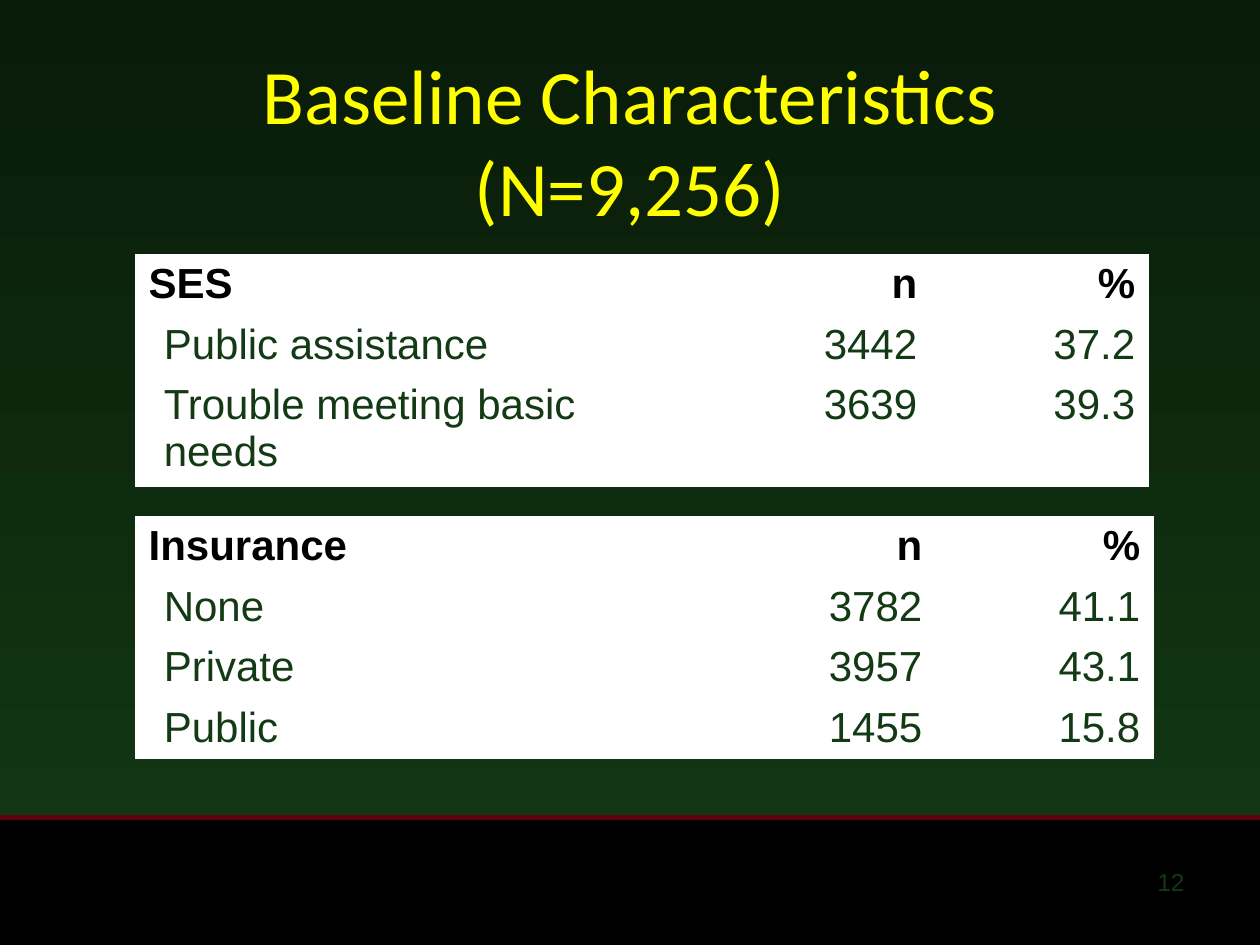
from dataclasses import dataclass

from lxml import etree
from pptx import Presentation
from pptx import util as u
from pptx.dml.color import RGBColor
from pptx.enum import shapes, text
from pptx.oxml import ns


@dataclass(frozen=True)
class Theme:
    """Colours, fonts and type sizes of the slide."""

    top: str = "091B09"
    green: str = "133A14"
    black: str = "000000"
    white: str = "FFFFFF"
    red: str = "5F000F"
    yellow: str = "FFFF00"
    heading: str = "Calibri"
    body: str = "Arial"
    title_size: int = 44
    table_size: int = 24
    number_size: int = 14


THEME = Theme()
ALIGN = text.PP_ALIGN


def color(value):
    """Return a colour object for a hex value."""
    return RGBColor.from_string(value)


def add_run(para, words, font, size, value, bold=False):
    """Add one styled run to a paragraph."""
    span = para.add_run()
    span.text = words
    span.font.name = font
    span.font.size = u.Pt(size)
    span.font.bold = bold
    span.font.color.rgb = color(value)


def add_text_box(page, area, align, anchor):
    """Add a wrapping text box and return its first paragraph."""
    frame = page.shapes.add_textbox(*map(u.Inches, area)).text_frame
    frame.word_wrap = True
    frame.vertical_anchor = anchor
    para = frame.paragraphs[0]
    para.alignment = align
    return para


def add_background(page):
    """Fill the page with a vertical green gradient."""
    fill = page.background.fill
    fill.gradient()
    fill.gradient_angle = 270
    for stop, value, place in zip(fill.gradient_stops, (THEME.top, THEME.green), (0, 1)):
        stop.color.rgb = color(value)
        stop.position = place


def add_footer(page, area):
    """Add the black band, the red rule along its top and the page number."""
    left, top, width, height = area
    band = page.shapes.add_shape(shapes.MSO_SHAPE.RECTANGLE, *map(u.Inches, area))
    band.shadow.inherit = False
    band.fill.solid()
    band.fill.fore_color.rgb = color(THEME.black)
    band.line.fill.background()
    ends = map(u.Inches, (left, top - 0.01, left + width, top - 0.01))
    rule = page.shapes.add_connector(shapes.MSO_CONNECTOR.STRAIGHT, *ends)
    rule.line.color.rgb = color(THEME.red)
    rule.line.width = u.Pt(3)
    etree.SubElement(rule.element.spPr, ns.qn("a:effectLst"))
    number_area = (left + width - 2.83, top + 0.33, 2.33, 0.52)
    para = add_text_box(page, number_area, ALIGN.RIGHT, text.MSO_ANCHOR.TOP)
    add_run(para, "12", THEME.body, THEME.number_size, THEME.green)


def add_title(page, area, lines):
    """Add the centred title, one line break between its lines."""
    para = add_text_box(page, area, ALIGN.CENTER, text.MSO_ANCHOR.MIDDLE)
    for index, line in enumerate(lines):
        if index:
            para.add_line_break()
        add_run(para, line, THEME.heading, THEME.title_size, THEME.yellow)


def set_borders(cell, bottom):
    """Draw white borders around a cell, with the given bottom width."""
    properties = cell._tc.get_or_add_tcPr()
    for index, (side, width) in enumerate(zip("LRTB", (1, 1, 1, bottom))):
        line = etree.Element(ns.qn(f"a:ln{side}"), w=str(u.Pt(width)))
        solid = etree.SubElement(line, ns.qn("a:solidFill"))
        etree.SubElement(solid, ns.qn("a:srgbClr"), val=THEME.white)
        properties.insert(index, line)


def fill_cell(cell, words, header, first):
    """Style one cell and write its text."""
    cell.fill.solid()
    cell.fill.fore_color.rgb = color(THEME.white)
    set_borders(cell, 3 if header else 1)
    cell.margin_bottom = u.Inches(0.03)
    para = cell.text_frame.paragraphs[0]
    para.alignment = ALIGN.LEFT if first else ALIGN.RIGHT
    if first and not header:
        para.level = 1
        properties = para._p.get_or_add_pPr()
        properties.set("marL", str(u.Inches(0.12)))
        properties.set("indent", "0")
    value = THEME.black if header else THEME.green
    add_run(para, words, THEME.body, THEME.table_size, value, header)


def add_count_table(page, left, top, widths, heights, records):
    """Add a table of counts and percentages."""
    area = (left, top, sum(widths), sum(heights))
    table = page.shapes.add_table(len(records), len(widths), *map(u.Inches, area)).table
    for column, width in zip(table.columns, widths):
        column.width = u.Inches(width)
    for index, (row, height, record) in enumerate(zip(table.rows, heights, records)):
        row.height = u.Inches(height)
        for place, words in enumerate(record):
            fill_cell(row.cells[place], words, index == 0, place == 0)


def main():
    """Build the slide and save it."""
    deck = Presentation()
    deck.slide_width, deck.slide_height = u.Inches(10), u.Inches(7.5)
    page = deck.slides.add_slide(deck.slide_layouts[6])
    add_background(page)
    add_footer(page, (0, 6.5, 10, 1))
    add_title(page, (0.5, 0.3, 9, 1.62), ("Baseline Characteristics", "(N=9,256)"))
    status = (
        ("SES", "n", "%"),
        ("Public assistance", "3442", "37.2"),
        ("Trouble meeting basic needs", "3639", "39.3"),
    )
    insurance = (
        ("Insurance", "n", "%"),
        ("None", "3782", "41.1"),
        ("Private", "3957", "43.1"),
        ("Public", "1455", "15.8"),
    )
    add_count_table(page, 1.08, 2.02, (4.52, 1.78, 1.73), (0.48, 0.48, 0.87), status)
    add_count_table(page, 1.08, 4.1, (4.15, 2.19, 1.73), (0.47,) * 4, insurance)
    deck.save("out.pptx")


if __name__ == "__main__":
    main()
